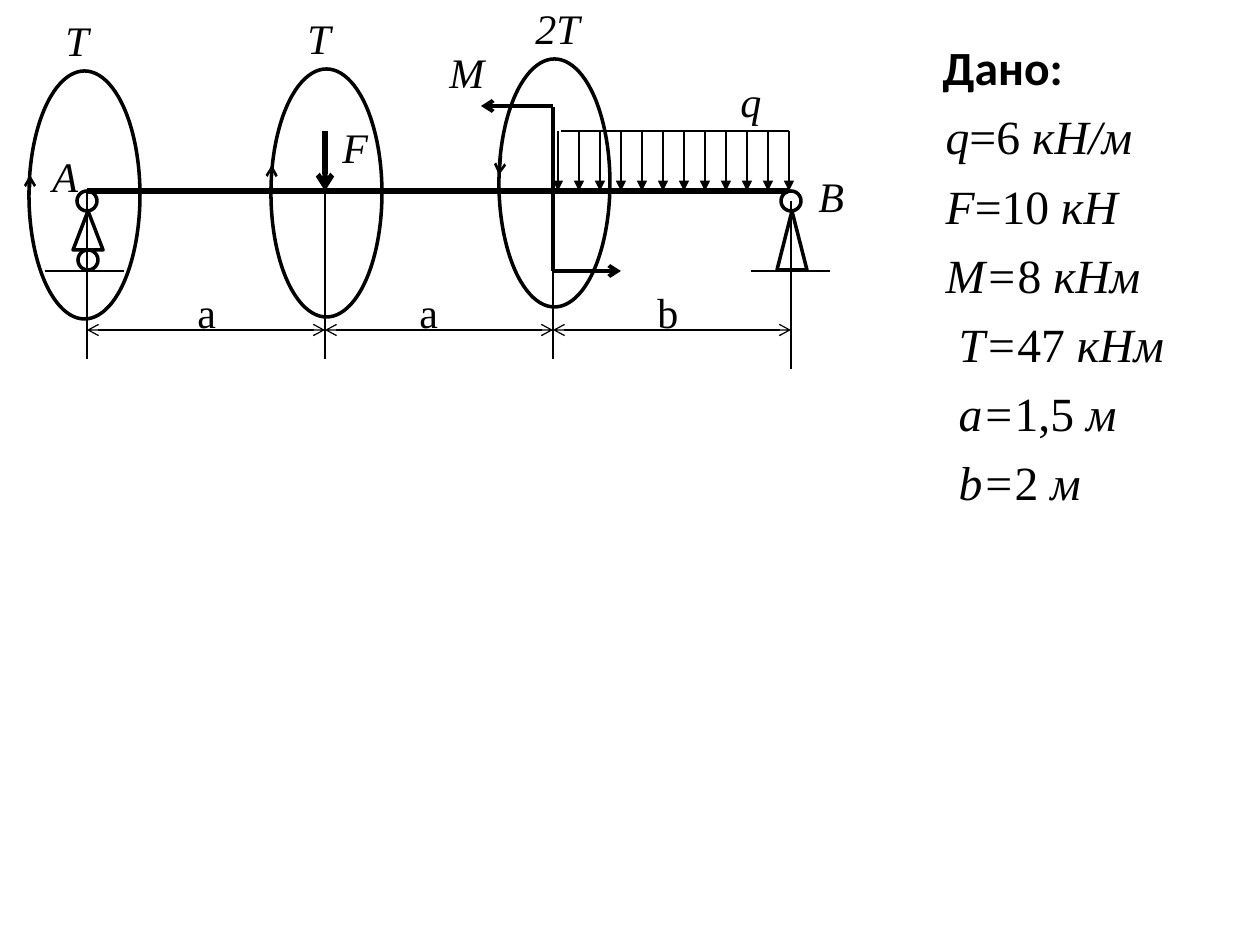
from itertools import pairwise
from lxml.etree import SubElement as Sub
from pptx import Presentation
from pptx.dml.color import RGBColor
from pptx.enum.shapes import MSO_CONNECTOR as Link, MSO_SHAPE as Kind
from pptx.enum.text import MSO_ANCHOR as Anchor, MSO_AUTO_SIZE as Fit
from pptx.oxml.ns import qn
from pptx.util import Emu, Pt

INK = {"main": "000000"}
FONT = {"math": "Times New Roman", "head": "Calibri"}


def px(val):
    return Emu(round(val * 914400 / 126))


class Sketch:
    """Holds the style and the current slide, and draws each kind of element."""

    def __init__(self, slide):
        self.slide = slide
        self.color = RGBColor.from_string(INK["main"])

    def line(self, x1, y1, x2, y2, width=0.75, head=None, tail=None, host=None):
        shapes = (host or self.slide).shapes
        link = shapes.add_connector(Link.STRAIGHT, px(x1), px(y1), px(x2), px(y2))
        link.line.color.rgb = self.color
        link.line.width = Pt(width)
        props = link.element.spPr
        for tag, tip in (("a:headEnd", head), ("a:tailEnd", tail)):
            if tip:
                Sub(props.find(qn("a:ln")), qn(tag), type=tip)
        Sub(props, qn("a:effectLst"))

    def shape(self, kind, x, y, w, h):
        item = self.slide.shapes.add_shape(kind, px(x), px(y), px(w), px(h))
        item.shadow.inherit = False
        item.fill.background()
        item.line.color.rgb = self.color
        item.line.width = Pt(2)

    def style(self, font, size, name=FONT["math"]):
        font.name, font.size = name, Pt(size)
        font.color.rgb = self.color

    def label(self, text, x, y, w, italic=True):
        box = self.slide.shapes.add_textbox(px(x), px(y), px(w), px(63))
        frame = box.text_frame
        frame.word_wrap = False
        frame.auto_size = Fit.SHAPE_TO_FIT_TEXT
        para = frame.paragraphs[0]
        para.text = text
        self.style(para.font, 24)
        para.font.italic = italic

    def given(self, x, y, w, h, title, rows):
        body = self.slide.placeholders[1]
        body.left, body.top, body.width, body.height = map(px, (x, y, w, h))
        frame = body.text_frame
        frame.word_wrap = True
        frame.auto_size = Fit.NONE
        frame.vertical_anchor = Anchor.TOP
        para = frame.paragraphs[0]
        para.text = title
        self.style(para.font, 27.2, FONT["head"])
        para.font.bold = True
        self.indent(para, 32)
        for left, *parts in rows:
            para = frame.add_paragraph()
            self.style(para.font, 27.2)
            self.indent(para, left)
            for part, italic in zip(parts, (True, False, True)):
                run = para.add_run()
                run.text = part
                run.font.italic = italic

    def indent(self, para, left):
        para.space_before = Pt(6.8)
        props = para._p.get_or_add_pPr()
        props.set("marL", str(px(left)))
        props.set("indent", "0")
        Sub(props, qn("a:buNone"))


def main():
    deck = Presentation()
    deck.slide_width, deck.slide_height = px(1260), px(945)
    slide = deck.slides.add_slide(deck.slide_layouts[1])
    title = slide.shapes.title.element
    title.getparent().remove(title)
    art = Sketch(slide)

    beam, floor, dim = 191, 271, 330
    marks = (87, 325, 553, 791)
    start, force, couple, end = marks

    art.shape(Kind.ISOSCELES_TRIANGLE, 73, 211, 30, 39)
    art.shape(Kind.ISOSCELES_TRIANGLE, 777, 211, 30, 59)
    for x, y in ((77, beam), (78, 250), (781, beam)):
        art.shape(Kind.OVAL, x, y, 20, 20)
    for x in (45, 751):
        art.line(x, floor, x + 79, floor)
    art.line(start, beam, 788, beam, 3)

    for x in marks[:3]:
        art.line(x, beam, x, 359)
    art.line(end, 201, end, 369)
    for left, right in pairwise(marks):
        art.line(left, dim, right, dim, head="arrow", tail="arrow")
    for text, x in (("a", 185), ("a", 407), ("b", 645)):
        art.label(text, x, 280, 45, italic=False)

    art.line(force, 131, force, beam, 3, tail="arrow")
    load = slide.shapes.add_group_shape()
    for x in range(558, 790, 21):
        art.line(x, 131, x, beam, tail="triangle", host=load)
    art.line(789, 131, 561, 131, host=load)
    art.line(couple, 106, 481, 106, 2.25, tail="arrow")
    art.line(couple, floor, 621, floor, 2.25, tail="arrow")
    art.line(couple, floor, couple, 107, 2.25)

    for x, y in ((29, 71), (271, 69), (499, 59)):
        art.shape(Kind.OVAL, x, y, 111, 248)
    for ends in ((30, 195, 30, 175), (271, 194, 272, 165), (501, 156, 499, 175)):
        art.line(*ends, 1.5, tail="arrow")

    for text, x, y, w in (
        ("F", 330, 115, 52), ("q", 728, 69, 47), ("M", 437, 40, 60),
        ("А", 40, 144, 52), ("В", 806, 164, 52),
        ("T", 53, 8, 49), ("T", 295, 6, 49), ("2T", 523, -4, 71),
    ):
        art.label(text, x, y, w)

    art.given(898, 32, 339, 495, "Дано:", (
        (35, "q", "=6 ", "кН/м"),
        (35, "F", "=10 ", "кН"),
        (35, "М=", "8 ", "кНм"),
        (48, "T=", "47 ", "кНм"),
        (48, "a=", "1,5 ", "м"),
        (48, "b=", "2 ", "м"),
    ))
    deck.save("out.pptx")


if __name__ == "__main__":
    main()
